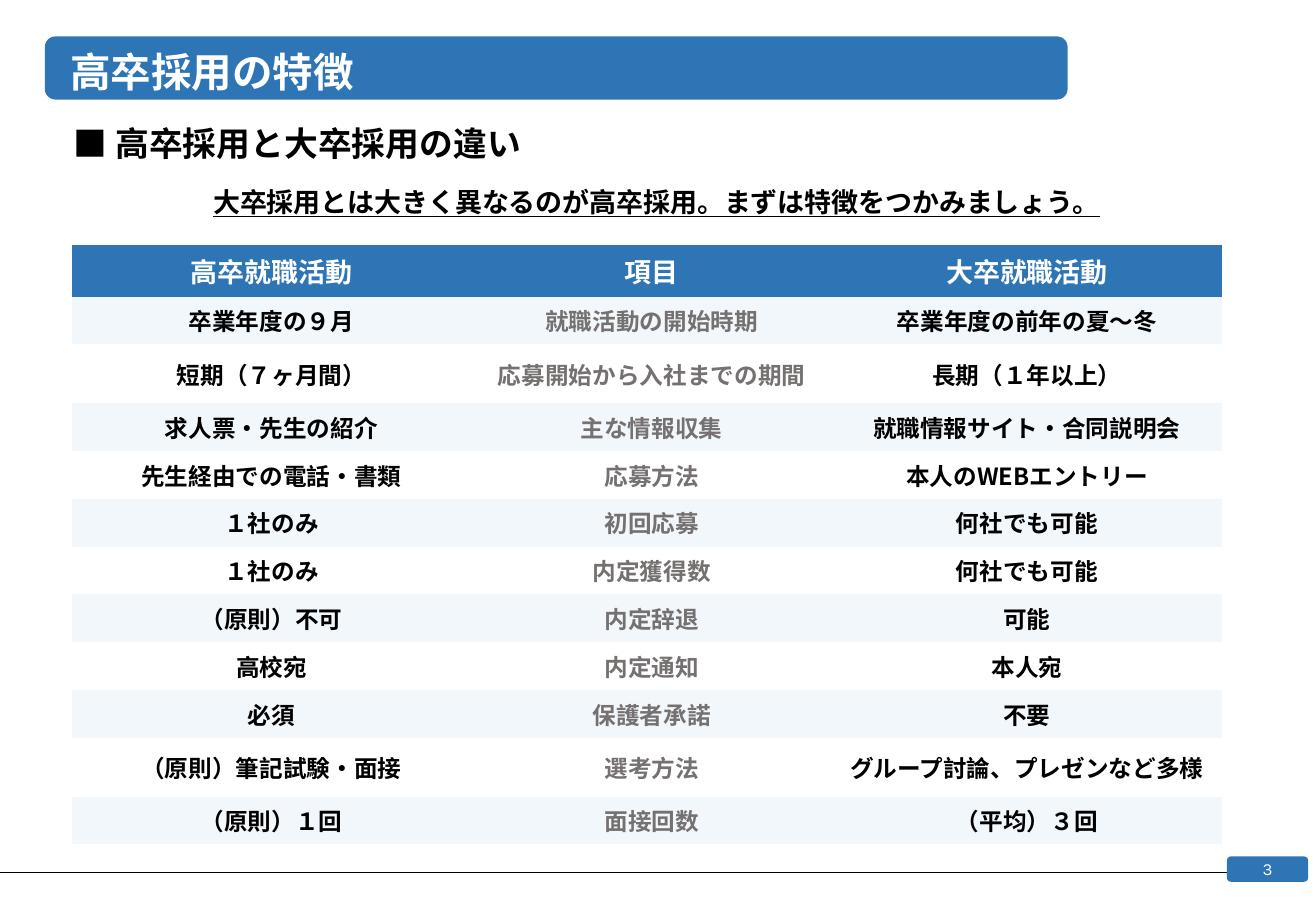
from dataclasses import dataclass

from lxml import etree
from pptx import Presentation
from pptx.dml.color import RGBColor
from pptx.enum.shapes import MSO_CONNECTOR, MSO_SHAPE
from pptx.enum.text import MSO_ANCHOR, PP_ALIGN
from pptx.oxml.ns import qn
from pptx.util import Pt

ROUNDED = MSO_SHAPE.ROUNDED_RECTANGLE
STRAIGHT = MSO_CONNECTOR.STRAIGHT
LEFT, CENTER = PP_ALIGN.LEFT, PP_ALIGN.CENTER
TOP, MIDDLE = MSO_ANCHOR.TOP, MSO_ANCHOR.MIDDLE

TITLE = "高卒採用の特徴"
SUBTITLE = "■ 高卒採用と大卒採用の違い"
LEAD = "大卒採用とは大きく異なるのが高卒採用。まずは特徴をつかみましょう。"
PAGE_NUMBER = "3"
COMPARISON = [
    ("高卒就職活動", "項目", "大卒就職活動"),
    ("卒業年度の９月", "就職活動の開始時期", "卒業年度の前年の夏～冬"),
    ("短期（７ヶ月間）", "応募開始から入社までの期間", "長期（１年以上）"),
    ("求人票・先生の紹介", "主な情報収集", "就職情報サイト・合同説明会"),
    ("先生経由での電話・書類", "応募方法", "本人のWEBエントリー"),
    ("１社のみ", "初回応募", "何社でも可能"),
    ("１社のみ", "内定獲得数", "何社でも可能"),
    ("（原則）不可", "内定辞退", "可能"),
    ("高校宛", "内定通知", "本人宛"),
    ("必須", "保護者承諾", "不要"),
    ("（原則）筆記試験・面接", "選考方法", "グループ討論、プレゼンなど多様"),
    ("（原則）１回", "面接回数", "（平均）３回"),
]

# Lengths in points; boxes are left, top, width, height
SLIDE_SIZE = (780, 540)
TITLE_BAR = (26.6, 21.6, 606.2, 37.4)
TITLE_BOX = (34.6, 28.8, 573, 30.2)
SUBTITLE_BOX = (36.7, 72, 537.8, 26.6)
LEAD_BOX = (46.1, 108.7, 686.2, 26.6)
PAGE_CHIP = (727.2, 507.6, 48.2, 15.1)
FOOTER_Y = 516.8
TABLE_ORIGIN = (42.5, 145.5)
COLUMN_WIDTHS = (236.9, 213.8, 231.1)
HEADER_HEIGHT, ROW_HEIGHT, TALL_HEIGHT = 30.3, 28.4, 34.7
TALL_ROWS = (2, 10)
ITEM_COLUMN = 1
NO_GRID_STYLE = "{2D5ABB26-0587-4C30-8999-92F81FD0307C}"


@dataclass(frozen=True)
class Theme:
    font: str = "Noto Sans CJK JP"
    number_font: str = "Karla"
    blue: str = "2E75B6"
    band: str = "F2F7FC"
    white: str = "FFFFFF"
    black: str = "000000"
    gray: str = "767171"
    title: int = 24
    subtitle: int = 20
    heading: int = 16
    body: int = 14
    number: int = 10


THEME = Theme()


def points(values):
    return [Pt(value) for value in values]


def set_text(text_frame, text, size, color, align=CENTER, font=THEME.font,
             bold=True, underline=None, line_spacing=None):
    text_frame.text = text
    paragraph = text_frame.paragraphs[0]
    paragraph.alignment = align
    paragraph.line_spacing = line_spacing
    run = paragraph.runs[0]
    run.font.size = Pt(size)
    run.font.bold = bold
    run.font.underline = underline
    run.font.color.rgb = RGBColor.from_string(color)
    run.font.name = font
    # East Asian glyphs take their typeface from a separate element
    east_asian = etree.Element(qn("a:ea"), typeface=font)
    run.font._element.find(qn("a:latin")).addnext(east_asian)


def add_label(slide, box, text, size, color, anchor=TOP, **style):
    text_frame = slide.shapes.add_textbox(*points(box)).text_frame
    text_frame.word_wrap = True
    text_frame.vertical_anchor = anchor
    set_text(text_frame, text, size, color, line_spacing=0.9, **style)


def add_blue_bar(slide, box):
    shape = slide.shapes.add_shape(ROUNDED, *points(box))
    shape.shadow.inherit = False
    shape.fill.solid()
    shape.fill.fore_color.rgb = RGBColor.from_string(THEME.blue)
    shape.line.fill.background()
    return shape


def add_footer(slide):
    rule = slide.shapes.add_connector(
        STRAIGHT, *points((0, FOOTER_Y, PAGE_CHIP[0], FOOTER_Y)))
    rule.line.color.rgb = RGBColor.from_string(THEME.black)
    rule.line.width = Pt(0.25)
    etree.SubElement(rule._element.spPr, qn("a:effectLst"))

    text_frame = add_blue_bar(slide, PAGE_CHIP).text_frame
    text_frame.margin_top = text_frame.margin_bottom = 0
    text_frame.vertical_anchor = MIDDLE
    set_text(text_frame, PAGE_NUMBER, THEME.number, THEME.white,
             font=THEME.number_font, bold=False)


def cell_style(row, column):
    """Return the fill (None for clear), text size and text colour of a cell."""
    if row == 0:
        return THEME.blue, THEME.heading, THEME.white
    fill = THEME.band if row % 2 else None
    return fill, THEME.body, THEME.gray if column == ITEM_COLUMN else THEME.black


def add_comparison(slide):
    heights = [TALL_HEIGHT if row in TALL_ROWS else ROW_HEIGHT
               for row in range(len(COMPARISON))]
    heights[0] = HEADER_HEIGHT
    frame = slide.shapes.add_table(
        len(heights), len(COLUMN_WIDTHS),
        *points((*TABLE_ORIGIN, sum(COLUMN_WIDTHS), sum(heights))))
    next(frame._element.iter(qn("a:tableStyleId"))).text = NO_GRID_STYLE
    table = frame.table
    table.horz_banding = False
    for column, width in zip(table.columns, COLUMN_WIDTHS):
        column.width = Pt(width)
    for row, height in zip(table.rows, heights):
        row.height = Pt(height)

    for row, texts in enumerate(COMPARISON):
        for column, text in enumerate(texts):
            fill, size, color = cell_style(row, column)
            cell = table.cell(row, column)
            cell.vertical_anchor = MIDDLE
            if fill:
                cell.fill.solid()
                cell.fill.fore_color.rgb = RGBColor.from_string(fill)
            else:
                cell.fill.background()
            set_text(cell.text_frame, text, size, color)


def main():
    presentation = Presentation()
    presentation.slide_width, presentation.slide_height = points(SLIDE_SIZE)
    slide = presentation.slides.add_slide(presentation.slide_layouts[6])

    add_blue_bar(slide, TITLE_BAR)
    add_footer(slide)
    add_label(slide, TITLE_BOX, TITLE, THEME.title, THEME.white,
              anchor=MIDDLE, align=LEFT)
    add_label(slide, SUBTITLE_BOX, SUBTITLE, THEME.subtitle, THEME.black, align=LEFT)
    add_comparison(slide)
    add_label(slide, LEAD_BOX, LEAD, THEME.heading, THEME.black, underline=True)

    presentation.save("out.pptx")


if __name__ == "__main__":
    main()
